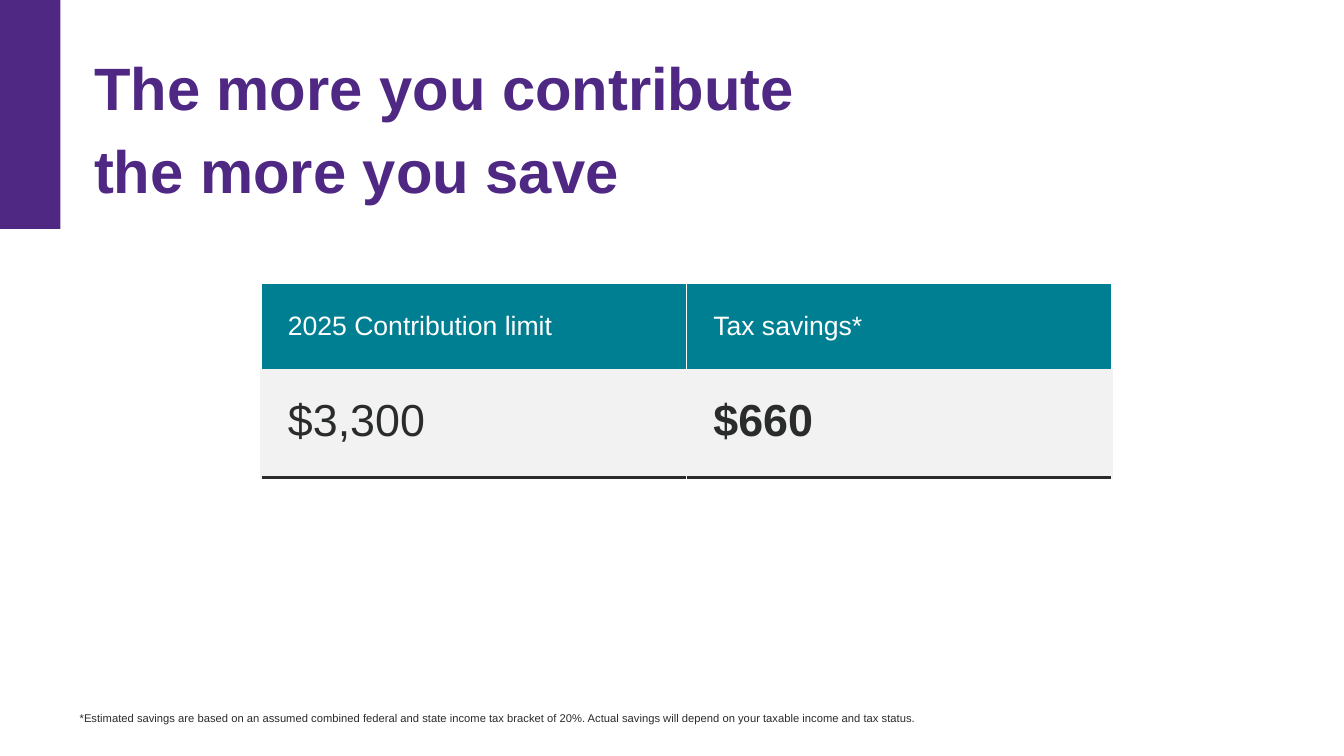
import pptx
import pptx.util
import pptx.dml.color
import pptx.enum.shapes
import pptx.enum.text
import pptx.oxml.ns
from dataclasses import dataclass
from lxml import etree

Pt = pptx.util.Pt
ANCHOR = pptx.enum.text.MSO_ANCHOR


@dataclass
class Theme:
    font: str = "Arial"
    purple: str = "4F2883"
    teal: str = "007F93"
    grey: str = "F2F2F2"
    ink: str = "2A2C2C"
    white: str = "FFFFFF"
    title_size: float = 42.7
    amount_size: float = 32
    header_size: float = 19
    note_size: float = 8


class SlideBuilder:
    def __init__(self, page, theme):
        self.page = page
        self.theme = theme

    def color(self, value):
        return pptx.dml.color.RGBColor.from_string(value)

    def style(self, para, size, color, bold=False):
        para.font.name = self.theme.font
        para.font.size = Pt(size)
        para.font.bold = bold
        para.font.color.rgb = self.color(color)

    def place_text(self, box, left, top, width, height):
        """Position a text shape, clear its margins and return its first paragraph."""
        box.left, box.top, box.width, box.height = map(Pt, (left, top, width, height))
        frame = box.text_frame
        frame.margin_left = frame.margin_top = frame.margin_right = frame.margin_bottom = 0
        frame.word_wrap = True
        frame.auto_size = pptx.enum.text.MSO_AUTO_SIZE.SHAPE_TO_FIT_TEXT
        frame.vertical_anchor = ANCHOR.TOP
        para = frame.paragraphs[0]
        para.alignment = pptx.enum.text.PP_ALIGN.LEFT
        return para

    def band(self, left, top, width, height):
        shape = self.page.shapes.add_shape(
            pptx.enum.shapes.MSO_SHAPE.RECTANGLE, Pt(left), Pt(top), Pt(width), Pt(height))
        shape.shadow.inherit = False
        shape.fill.solid()
        shape.fill.fore_color.rgb = self.color(self.theme.purple)
        shape.line.fill.background()

    def title(self, text, *frame):
        para = self.place_text(self.page.shapes.title, *frame)
        para.text = text
        para.line_spacing = 1.15
        self.style(para, self.theme.title_size, self.theme.purple, bold=True)

    def note(self, text, *frame):
        para = self.place_text(self.page.shapes.add_textbox(0, 0, 0, 0), *frame)
        para.text = text
        para.line_spacing = 1.3
        self.style(para, self.theme.note_size, self.theme.ink)

    def borders(self, cell, side_color, bottom_color, bottom_width):
        properties = cell._tc.get_or_add_tcPr()
        sides = [("lnL", side_color, 1), ("lnR", side_color, 1),
                 ("lnT", side_color, 1), ("lnB", bottom_color, bottom_width)]
        for index, (tag, color, width) in enumerate(sides):
            line = etree.Element(pptx.oxml.ns.qn("a:" + tag), w=str(Pt(width)))
            fill = etree.SubElement(line, pptx.oxml.ns.qn("a:solidFill"))
            etree.SubElement(fill, pptx.oxml.ns.qn("a:srgbClr"), val=color)
            properties.insert(index, line)

    def cell(self, cell, text, fill, size, color, bold, anchor):
        cell.fill.solid()
        cell.fill.fore_color.rgb = self.color(fill)
        cell.margin_left = cell.margin_right = cell.margin_top = cell.margin_bottom = Pt(19.2)
        cell.vertical_anchor = anchor
        cell.text = text
        self.style(cell.text_frame.paragraphs[0], size, color, bold)

    def savings_table(self, headers, amounts, left, top, column_width, row_heights):
        theme = self.theme
        table = self.page.shapes.add_table(
            2, len(headers), Pt(left), Pt(top),
            Pt(column_width * len(headers)), Pt(sum(row_heights))).table
        for row, height in zip(table.rows, row_heights):
            row.height = Pt(height)
        for index, (header, amount) in enumerate(zip(headers, amounts)):
            table.columns[index].width = Pt(column_width)
            top_cell, bottom_cell = table.cell(0, index), table.cell(1, index)
            self.cell(top_cell, header, theme.teal, theme.header_size,
                      theme.white, False, ANCHOR.MIDDLE)
            self.borders(top_cell, theme.white, theme.grey, 1)
            # The last column holds the result, in bold
            self.cell(bottom_cell, amount, theme.grey, theme.amount_size,
                      theme.ink, index == len(headers) - 1, ANCHOR.TOP)
            self.borders(bottom_cell, theme.grey, theme.ink, 3)


def main():
    deck = pptx.Presentation()
    deck.slide_width, deck.slide_height = Pt(960), Pt(540)
    page = deck.slides.add_slide(deck.slide_layouts[5])
    slide = SlideBuilder(page, Theme())

    # Heading with its side band
    slide.band(0, 0, 43.2, 163.5)
    slide.title("The more you contribute the more you save", 67.2, 28.8, 534, 109.5)

    # Limit and savings
    slide.savings_table(["2025 Contribution limit", "Tax savings*"], ["$3,300", "$660"],
                        186.5, 202.5, 303.9, [60.5, 77.3])

    # Footnote
    slide.note("*Estimated savings are based on an assumed combined federal and state income tax "
               "bracket of 20%. Actual savings will depend on your taxable income and tax status.",
               56.9, 505.5, 846, 11.5)

    deck.save("out.pptx")


if __name__ == "__main__":
    main()
